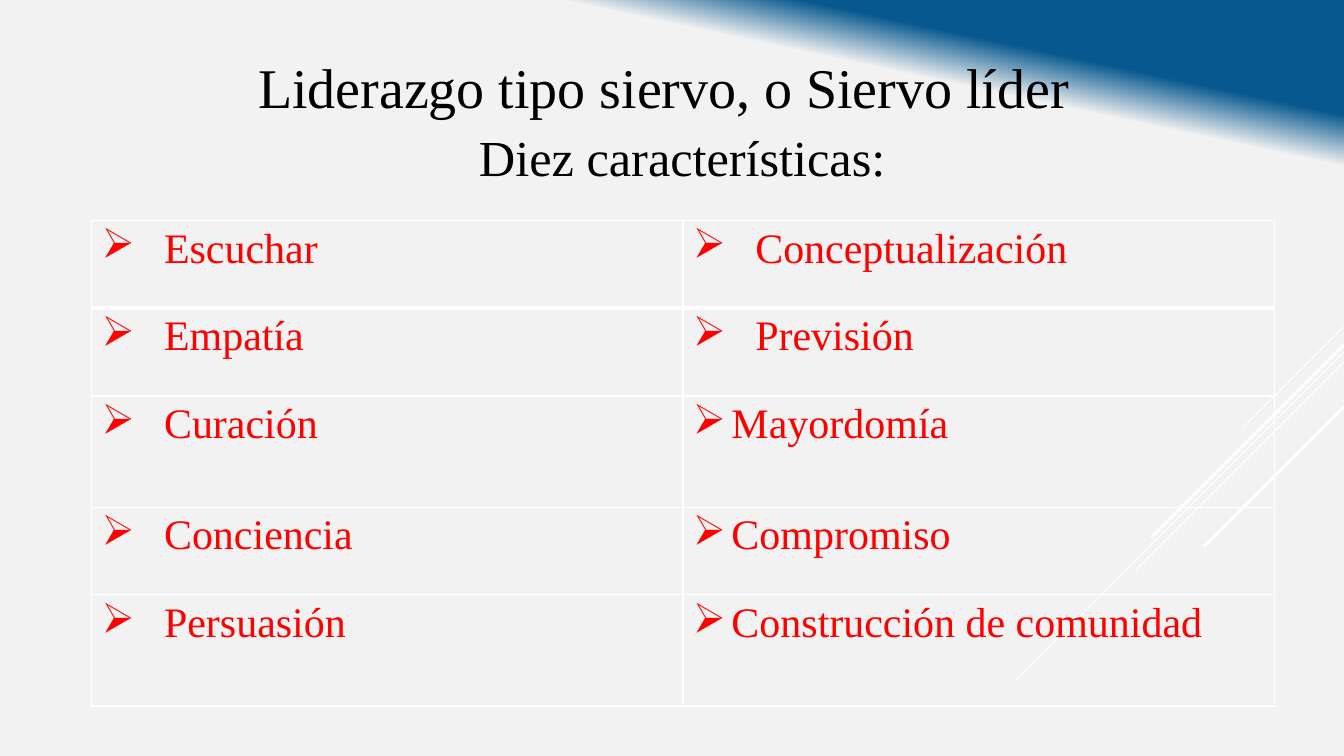
"""Build a slide listing the ten traits of servant leadership."""
import pptx
import pptx.dml.color
import pptx.enum.shapes
import pptx.enum.text
import pptx.oxml
import pptx.oxml.ns
import pptx.util

Cm = pptx.util.Cm
RGBColor = pptx.dml.color.RGBColor
BLACK = RGBColor(0x00, 0x00, 0x00)
RED = RGBColor(0xFF, 0x00, 0x00)
WHITE = RGBColor(0xFF, 0xFF, 0xFF)
BLUE = RGBColor(0x06, 0x58, 0x8E)
PALE = RGBColor(0xF2, 0xF2, 0xF2)

WIDTH, HEIGHT = 33.87, 19.05
WIDE, NARROW = 1.57, 0.97
ROW_HEIGHTS = [2.21, 2.21, 2.8, 2.21, 2.8]
TRAITS = [
    [("Escuchar", WIDE), ("Conceptualización", WIDE)],
    [("Empatía", WIDE), ("Previsión", WIDE)],
    [("Curación", WIDE), ("Mayordomía", NARROW)],
    [("Conciencia", WIDE), ("Compromiso", NARROW)],
    [("Persuasión", WIDE), ("Construcción de comunidad", NARROW)],
]
DIAGONALS = [
    (8.23, 2.54, 0.75),
    (8.86, 8.28, 0.75),
    (9.12, 5.27, 0.75),
    (8.69, 4.85, 2.25),
    (10.24, 3.53, 2.25),
]


def write(para, text, size, color, font="Times New Roman", align=None,
          before=0, margin=0, indent=0, bullet=None):
    """Put formatted text into a paragraph."""
    span = para.add_run()
    span.text = text
    span.font.name = font
    span.font.size = pptx.util.Pt(size)
    span.font.bold = False
    span.font.color.rgb = color
    para.alignment = align
    para.space_before = pptx.util.Pt(before)
    properties = para._p.get_or_add_pPr()
    properties.set("marL", str(Cm(margin)))
    properties.set("indent", str(Cm(indent)))
    if bullet:
        mark = pptx.oxml.parse_xml(
            f'<a:buChar {pptx.oxml.ns.nsdecls("a")} char="{bullet}"/>')
        properties.append(mark)


class Slide:
    """Hold the style and the current slide."""

    def __init__(self, deck):
        """Add a title-only slide with a gradient background."""
        self.page = deck.slides.add_slide(deck.slide_layouts[5])
        fill = self.page.background.fill
        fill.gradient()
        fill.gradient_angle = 258
        for stop, color, position in zip(fill.gradient_stops, (BLUE, PALE), (0.11, 0.16)):
            stop.color.rgb = color
            stop.position = position

    def title(self, left, top, width, height):
        """Place the two-line title."""
        box = self.page.shapes.title
        box.left, box.top, box.width, box.height = map(Cm, (left, top, width, height))
        frame = box.text_frame
        frame.word_wrap = True
        frame.auto_size = pptx.enum.text.MSO_AUTO_SIZE.NONE
        frame.vertical_anchor = pptx.enum.text.MSO_ANCHOR.TOP
        center = pptx.enum.text.PP_ALIGN.CENTER
        write(frame.paragraphs[0], "Liderazgo tipo siervo, o Siervo líder", 40, BLACK,
              align=center, before=5)
        write(frame.add_paragraph(), "Diez características: ", 36, BLACK,
              align=center, before=5, indent=1.27)

    def diagonal(self, top, reach, weight):
        """Draw a 45-degree line down from the right edge."""
        line = self.page.shapes.add_connector(
            pptx.enum.shapes.MSO_CONNECTOR.STRAIGHT,
            Cm(WIDTH), Cm(top), Cm(WIDTH - reach), Cm(top + reach))
        line.line.color.rgb = WHITE
        line.line.width = pptx.util.Pt(weight)
        effects = pptx.oxml.parse_xml(f'<a:effectLst {pptx.oxml.ns.nsdecls("a")}/>')
        line._element.spPr.append(effects)

    def border(self, cell, side, weight):
        """Draw one white side of a cell."""
        cell._tc.get_or_add_tcPr().append(pptx.oxml.parse_xml(
            f'<a:{side} {pptx.oxml.ns.nsdecls("a")} w="{pptx.util.Pt(weight)}">'
            f'<a:solidFill><a:srgbClr val="{WHITE}"/></a:solidFill></a:{side}>'))

    def table(self, left, top, width):
        """Fill the table of traits."""
        table = self.page.shapes.add_table(
            len(TRAITS), 2, Cm(left), Cm(top), Cm(width), Cm(sum(ROW_HEIGHTS))).table
        table.first_row = False
        table.horz_banding = False
        for row, (traits, height) in enumerate(zip(TRAITS, ROW_HEIGHTS)):
            table.rows[row].height = Cm(height)
            for column, (trait, hang) in enumerate(traits):
                cell = table.cell(row, column)
                write(cell.text_frame.paragraphs[0], trait, 30, RED,
                      margin=hang, indent=-hang, bullet="➢")
                self.border(cell, "lnL", 1)
                self.border(cell, "lnR", 1)
                self.border(cell, "lnT", 3 if row == 1 else 1)
                self.border(cell, "lnB", 3 if row == 0 else 1)
                cell.fill.background()


def main():
    """Build and save the deck."""
    deck = pptx.Presentation()
    deck.slide_width, deck.slide_height = Cm(WIDTH), Cm(HEIGHT)
    slide = Slide(deck)
    slide.title(1.37, 1.19, 30.71, 10.19)
    for diagonal in DIAGONALS:
        slide.diagonal(*diagonal)
    slide.table(2.31, 5.56, 29.8)
    deck.save("out.pptx")


if __name__ == "__main__":
    main()
